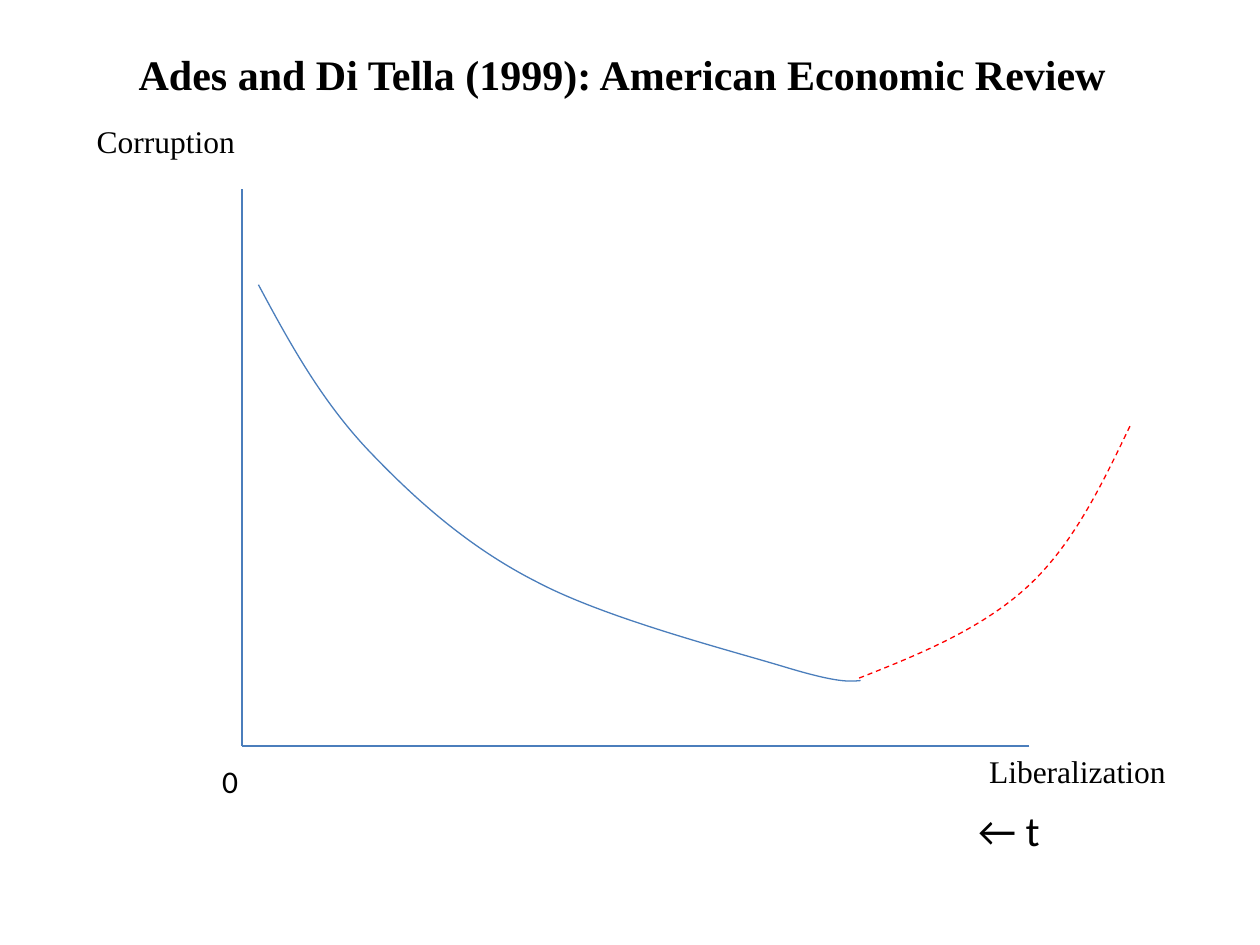
from lxml.etree import SubElement
from pptx import Presentation
from pptx.dml.color import RGBColor
from pptx.enum.dml import MSO_LINE
from pptx.enum.shapes import MSO_CONNECTOR
from pptx.enum.text import MSO_ANCHOR, MSO_AUTO_SIZE, PP_ALIGN
from pptx.oxml.ns import qn
from pptx.util import Cm, Pt

COLORS = {"text": "000000", "line": "4B7EBC", "reversal": "FF0000"}
SERIF = "Times New Roman"
SANS = "Calibri"
ORIGIN = (4.88, 15.04)
AXIS_ENDS = [(4.88, 3.81), (20.75, 15.04)]
DECLINE = [
    (5.21, 5.74),
    (5.82, 6.88), (6.45, 8.03), (7.39, 9.04),
    (8.33, 10.03), (9.42, 11.02), (10.82, 11.73),
    (12.22, 12.47), (14.71, 13.11), (15.8, 13.44),
    (16.89, 13.77), (17.12, 13.74), (17.35, 13.72),
]
REVERSAL = [
    (17.32, 13.67),
    (18.57, 13.18), (19.79, 12.67), (20.7, 11.84),
    (21.62, 11), (22.2, 9.8), (22.78, 8.59),
]


def write_text(shape, text, font=SERIF, size=18, bold=False, auto_size=MSO_AUTO_SIZE.SHAPE_TO_FIT_TEXT):
    frame = shape.text_frame
    frame.text = text
    frame.word_wrap = True
    frame.auto_size = auto_size
    frame.vertical_anchor = MSO_ANCHOR.TOP
    paragraph = frame.paragraphs[0]
    paragraph.alignment = PP_ALIGN.LEFT
    run_font = paragraph.runs[0].font
    run_font.name = font
    run_font.size = Pt(size)
    run_font.bold = bold
    run_font.color.rgb = RGBColor.from_string(COLORS["text"])


def add_title(slide, text):
    title = slide.shapes.title
    title.left, title.top, title.width, title.height = Cm(2.54), Cm(0.85), Cm(20.24), Cm(1.28)
    write_text(title, text, size=24, bold=True, auto_size=MSO_AUTO_SIZE.NONE)


def add_label(slide, text, left, top, width, height=1.03, **text_format):
    box = slide.shapes.add_textbox(Cm(left), Cm(top), Cm(width), Cm(height))
    write_text(box, text, **text_format)


def style_line(line, color):
    line.color.rgb = RGBColor.from_string(COLORS[color])
    line.width = Pt(0.75)


def add_axis(slide, start, end):
    axis = slide.shapes.add_connector(MSO_CONNECTOR.STRAIGHT, *map(Cm, start + end))
    style_line(axis.line, "line")
    SubElement(axis._element.spPr, qn("a:effectLst"))


def add_curve(slide, points, color, dash=None):
    start, *controls = [(Cm(x), Cm(y)) for x, y in points]
    builder = slide.shapes.build_freeform(*start)
    builder.add_line_segments(controls, close=False)
    curve = builder.convert_to_shape()
    segments = list(curve._element.iter(qn("a:lnTo")))
    for index in range(0, len(segments), 3):
        bezier, *others = segments[index:index + 3]
        bezier.tag = qn("a:cubicBezTo")
        for segment in others:
            bezier.append(segment[0])
            segment.getparent().remove(segment)
    curve.fill.background()
    curve.shadow.inherit = False
    style_line(curve.line, color)
    if dash is not None:
        curve.line.dash_style = dash


def main():
    presentation = Presentation()
    presentation.slide_width, presentation.slide_height = Cm(25.4), Cm(19.05)
    slide = presentation.slides.add_slide(presentation.slide_layouts[5])

    add_title(slide, "Ades and Di Tella (1999): American Economic Review")
    for end in AXIS_ENDS:
        add_axis(slide, end, ORIGIN)
    add_curve(slide, DECLINE, "line")
    add_curve(slide, REVERSAL, "reversal", dash=MSO_LINE.DASH)
    add_label(slide, "Corruption", 1.7, 2.33, 3.39)
    add_label(slide, "0", 4.23, 15.24, 1.27, font=SANS)
    add_label(slide, "Liberalization", 19.69, 15.04, 4.23)
    add_label(slide, "← t", 19.47, 16.09, 4.02, height=1.28, font=SANS, size=24)

    presentation.save("out.pptx")


if __name__ == "__main__":
    main()
